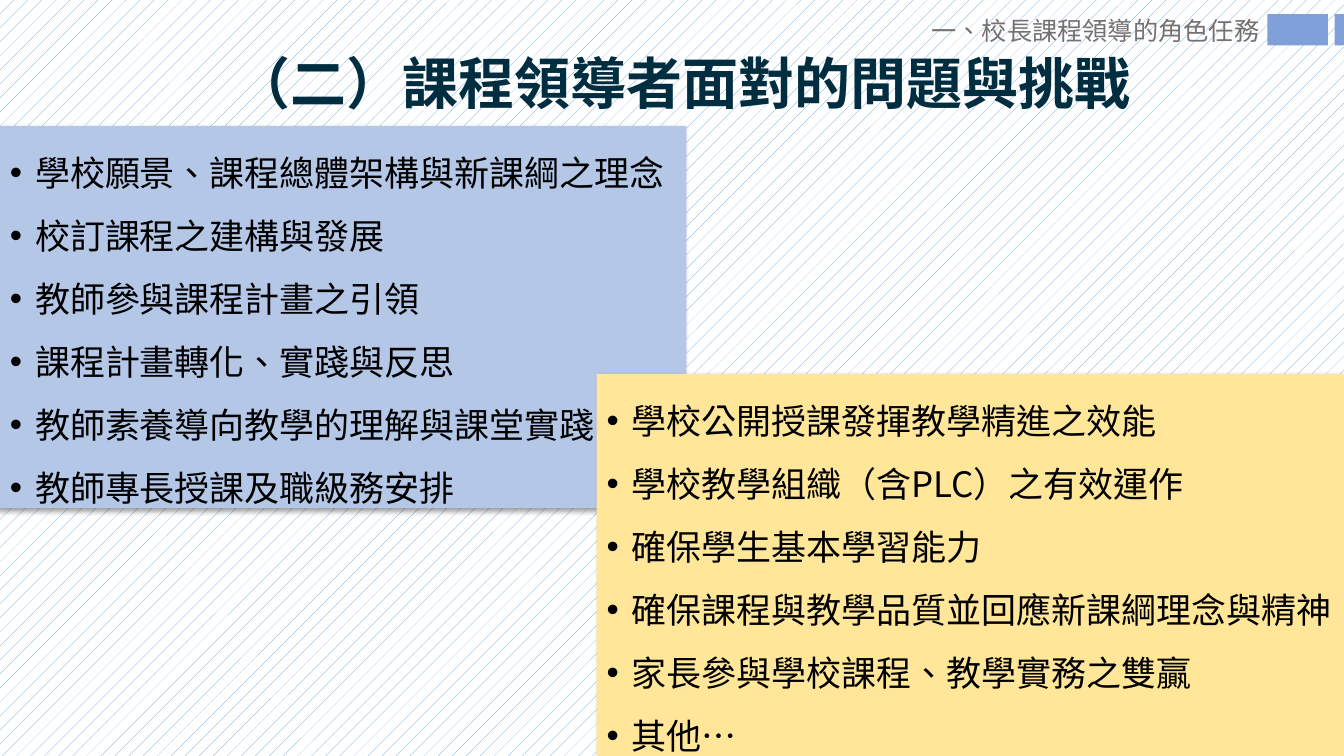
import lxml.etree
import pptx
import pptx.dml.color
import pptx.enum.dml
import pptx.enum.shapes
import pptx.enum.text
import pptx.oxml
import pptx.oxml.ns
import pptx.util

WIDTH, HEIGHT = pptx.util.Inches(13.33), pptx.util.Inches(7.5)
FONT = "Noto Sans CJK SC"
TITLE = "（二）課程領導者面對的問題與挑戰"
SECTION = "一、校長課程領導的角色任務"
CURRICULUM_ISSUES = [
    "學校願景、課程總體架構與新課綱之理念",
    "校訂課程之建構與發展",
    "教師參與課程計畫之引領",
    "課程計畫轉化、實踐與反思",
    "教師素養導向教學的理解與課堂實踐",
    "教師專長授課及職級務安排",
]
TEACHING_ISSUES = [
    "學校公開授課發揮教學精進之效能",
    "學校教學組織（含PLC）之有效運作",
    "確保學生基本學習能力",
    "確保課程與教學品質並回應新課綱理念與精神",
    "家長參與學校課程、教學實務之雙贏",
    "其他…",
]


def color(hex_value):
    return pptx.dml.color.RGBColor.from_string(hex_value)


def box(left, top, width, height):
    """Turn percentages of the slide's size into lengths."""
    return [round(share * side / 100) for share, side in
            zip((left, top, width, height), (WIDTH, HEIGHT) * 2)]


def set_attributes(target, values):
    for name, value in values.items():
        setattr(target, name, value)


def add_run(paragraph, text, size, hex_color, bold=False):
    run = paragraph.add_run()
    run.text = text
    set_attributes(run.font, {"name": FONT, "size": pptx.util.Pt(size), "bold": bold})
    run.font.color.rgb = color(hex_color)
    properties = run._r.get_or_add_rPr()
    properties.set("lang", "zh-TW")
    east_asian = lxml.etree.SubElement(properties, pptx.oxml.ns.qn("a:ea"))
    east_asian.set("typeface", FONT)


def add_rectangle(slide, position, hex_fill):
    rectangle = slide.shapes.add_shape(
        pptx.enum.shapes.MSO_SHAPE.RECTANGLE, *box(*position))
    rectangle.shadow.inherit = False
    rectangle.fill.solid()
    rectangle.fill.fore_color.rgb = color(hex_fill)
    rectangle.line.fill.background()
    return rectangle


def add_shadow(shape, degrees):
    effects = shape._element.spPr.find(pptx.oxml.ns.qn("a:effectLst"))
    effects.append(pptx.oxml.parse_xml(
        f'<a:outerShdw {pptx.oxml.ns.nsdecls("a")} blurRad="{pptx.util.Pt(4)}" '
        f'dist="{pptx.util.Pt(3)}" dir="{degrees * 60000}" algn="tl" rotWithShape="0">'
        '<a:srgbClr val="000000"><a:alpha val="40000"/></a:srgbClr></a:outerShdw>'))


def add_bullet(paragraph):
    properties = paragraph._p.get_or_add_pPr()
    indent = pptx.util.Inches(0.25)
    properties.set("marL", str(indent))
    properties.set("indent", str(-indent))
    for tag, name, value in (("a:buFont", "typeface", "Arial"), ("a:buChar", "char", "•")):
        lxml.etree.SubElement(properties, pptx.oxml.ns.qn(tag)).set(name, value)


def add_issue_panel(slide, position, hex_fill, shadow_degrees, issues):
    panel = add_rectangle(slide, position, hex_fill)
    add_shadow(panel, shadow_degrees)
    frame = panel.text_frame
    set_attributes(frame, {
        "word_wrap": True, "vertical_anchor": pptx.enum.text.MSO_ANCHOR.TOP})
    for index, issue in enumerate(issues):
        paragraph = frame.add_paragraph() if index else frame.paragraphs[0]
        set_attributes(paragraph, {
            "alignment": pptx.enum.text.PP_ALIGN.LEFT, "line_spacing": 1.5})
        add_bullet(paragraph)
        add_run(paragraph, issue, 25, "000000")


def format_title(title):
    left, top, width, height = box(11.18, 3.07, 79.2, 16.67)
    set_attributes(title, {"left": left, "top": top, "width": width, "height": height})
    set_attributes(title.text_frame, {
        "word_wrap": True,
        "auto_size": pptx.enum.text.MSO_AUTO_SIZE.NONE,
        "vertical_anchor": pptx.enum.text.MSO_ANCHOR.MIDDLE,
    })
    paragraph = title.text_frame.paragraphs[0]
    set_attributes(paragraph, {
        "alignment": pptx.enum.text.PP_ALIGN.CENTER, "line_spacing": 0.9})
    add_run(paragraph, TITLE, 40, "002D40", bold=True)


def add_section_label(slide):
    for left, width in ((94.3, 4.5), (99.3, 0.7)):
        add_rectangle(slide, (left, 1.87, width, 4.13), "80A0DA")
    label = slide.shapes.add_textbox(*box(68.57, 1.33, 26.1, 5.33))
    label.text_frame.word_wrap = False
    add_run(label.text_frame.paragraphs[0], SECTION, 18, "767171")


def set_background(slide):
    fill = slide.background.fill
    fill.patterned()
    fill.pattern = pptx.enum.dml.MSO_PATTERN.PERCENT_5
    fill.fore_color.rgb = color("5B9BD5")
    fill.back_color.rgb = color("FFFFFF")


def main():
    presentation = pptx.Presentation()
    set_attributes(presentation, {"slide_width": WIDTH, "slide_height": HEIGHT})
    slide = presentation.slides.add_slide(presentation.slide_layouts.get_by_name("Title Only"))
    set_background(slide)
    format_title(slide.shapes.title)
    add_issue_panel(slide, (0, 16.67, 51.07, 50.53), "B4C7E7", 135, CURRICULUM_ISSUES)
    add_issue_panel(slide, (44.4, 49.47, 55.6, 50.53), "FFE699", 45, TEACHING_ISSUES)
    add_section_label(slide)
    presentation.save("out.pptx")


if __name__ == "__main__":
    main()
